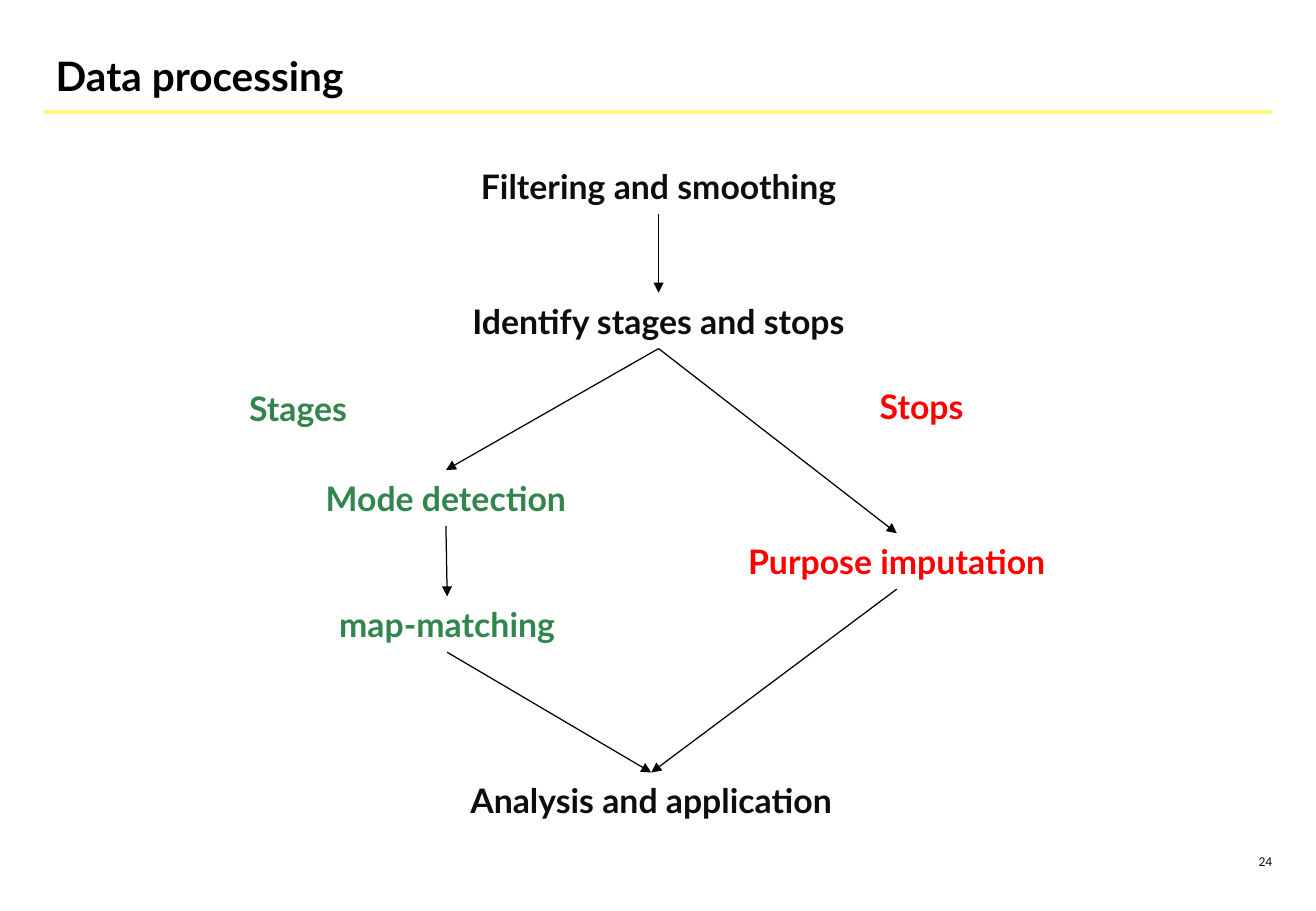
from lxml import etree
from pptx import Presentation
from pptx.dml.color import RGBColor
from pptx.enum import shapes, text
from pptx.oxml import ns
from pptx.util import Inches, Pt

# Content
COLORS = {"black": "000000", "ink": "0D0D0D", "green": "31854D",
          "red": "FF0000", "yellow": "FFF584"}
TITLE = "Data processing"
PAGE_NUMBER = "24"
STEP_HEIGHT = 0.46

# name: (wording, colour, centre x, top, width)
STEPS = {
    "filter": ("Filtering and smoothing", "ink", 5.42, 1.3, 3.4),
    "identify": ("Identify stages and stops", "ink", 5.42, 2.41, 4.51),
    "mode": ("Mode detection", "green", 3.67, 3.87, 2.66),
    "map": ("map-matching", "green", 3.68, 4.91, 2.66),
    "purpose": ("Purpose imputation", "red", 7.38, 4.39, 2.9),
    "analysis": ("Analysis and application", "ink", 5.36, 6.36, 3.4),
}
FLOWS = [("filter", "identify"), ("identify", "mode"), ("identify", "purpose"),
         ("mode", "map"), ("map", "analysis"), ("purpose", "analysis")]

# wording, colour, left, top, width
BRANCHES = [("Stages", "green", 1.93, 3.13, 3.7),
            ("Stops", "red", 7.12, 3.12, 1.94)]

deck = Presentation()
deck.slide_width, deck.slide_height = Inches(10.83), Inches(7.5)
page = deck.slides.add_slide(deck.slide_layouts[6])


def add_text(wording, color, left, top, width, height=STEP_HEIGHT, size=20,
             font="Lato", bold=True, align=text.PP_ALIGN.LEFT,
             anchor=text.MSO_ANCHOR.TOP, insets=(0.12, 0.06), wrap=True):
    box = page.shapes.add_textbox(Inches(left), Inches(top), Inches(width), Inches(height))
    frame = box.text_frame
    frame.word_wrap = wrap
    frame.vertical_anchor = anchor
    frame.margin_left = frame.margin_right = Inches(insets[0])
    frame.margin_top = frame.margin_bottom = Inches(insets[1])
    para = frame.paragraphs[0]
    para.alignment = align
    span = para.add_run()
    span.text = wording
    span.font.name, span.font.size, span.font.bold = font, Pt(size), bold
    span.font.color.rgb = RGBColor.from_string(COLORS[color])


def add_line(start, end, color="black", width=0.75, arrow=True):
    points = [Inches(value) for value in (*start, *end)]
    line = page.shapes.add_connector(shapes.MSO_CONNECTOR.STRAIGHT, *points)
    line.line.color.rgb = RGBColor.from_string(COLORS[color])
    line.line.width = Pt(width)
    if arrow:
        outline = line._element.spPr.find(ns.qn("a:ln"))
        etree.SubElement(outline, ns.qn("a:tailEnd"), type="triangle")
    etree.SubElement(line._element.spPr, ns.qn("a:effectLst"))


# Heading and page number
add_line((0.36, 0.92), (10.47, 0.92), "yellow", 2.5, arrow=False)
add_text(TITLE, "black", 0.36, 0.33, 10.11, 0.58, size=24,
         anchor=text.MSO_ANCHOR.MIDDLE, insets=(0.1, 0.05))
add_text(PAGE_NUMBER, "ink", 8.31, 6.97, 2.26, 0.33, size=8, font="Calibri",
         bold=False, align=text.PP_ALIGN.RIGHT, insets=(0.1, 0.05))

# Branch labels
for branch in BRANCHES:
    add_text(*branch)

# Steps
for wording, color, center, top, width in STEPS.values():
    add_text(wording, color, center - width / 2, top, width,
             align=text.PP_ALIGN.CENTER, anchor=text.MSO_ANCHOR.MIDDLE, wrap=False)

# Arrows from the foot of one step to the head of the next
for source, target in FLOWS:
    _, _, start_x, start_top, _ = STEPS[source]
    _, _, end_x, end_top, _ = STEPS[target]
    add_line((start_x, start_top + STEP_HEIGHT), (end_x, end_top))

deck.save("out.pptx")
